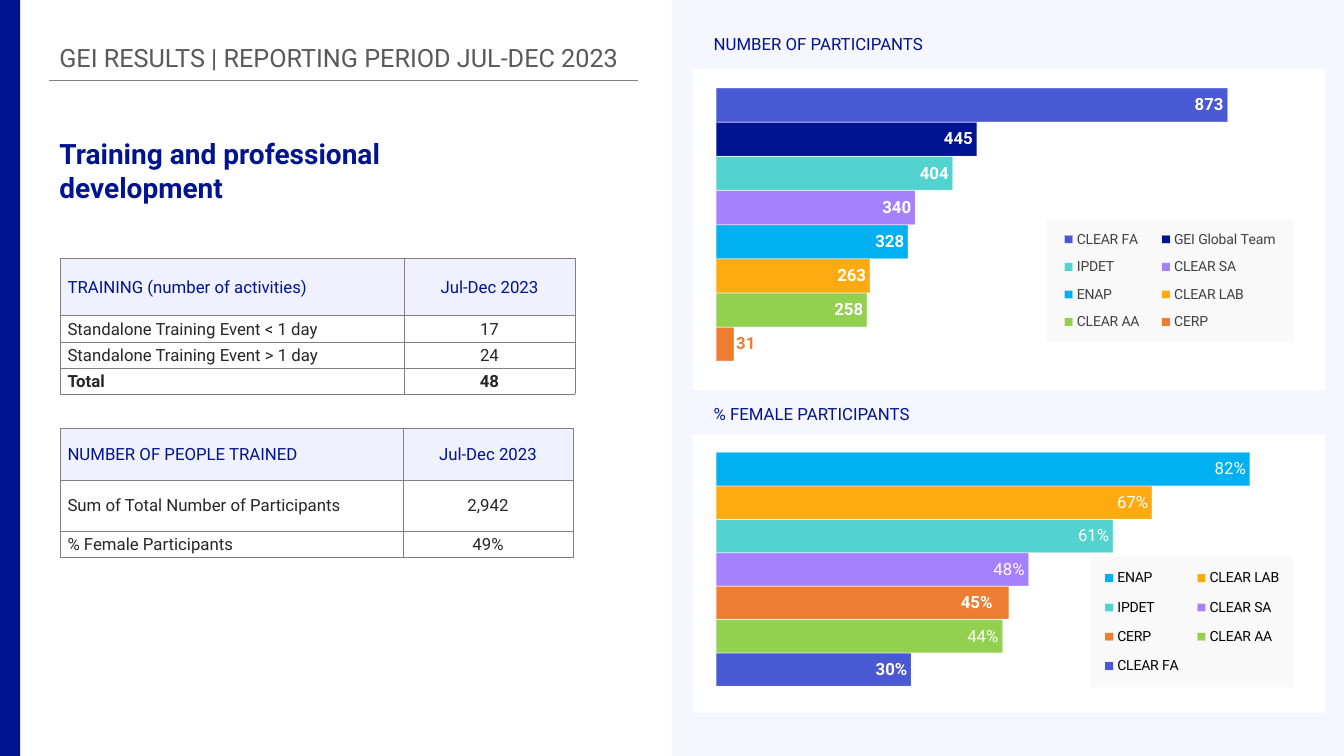
import pptx
import pptx.chart.data
import pptx.dml.color
import pptx.enum.chart
import pptx.enum.shapes
import pptx.enum.text
import pptx.oxml
import pptx.oxml.ns
import pptx.util
from lxml import etree

THEME = {
    "font": "Roboto", "chart_font": "Calibri",
    "navy": "001391", "pale": "EFF1FF", "white": "FFFFFF", "grey": "808080",
    "heading": "595959", "body": "262626", "legend_box": "F9F9F9",
    "title_size": 20, "heading_size": 18, "body_size": 12, "legend_size": 10,
}
TEAM_COLOURS = {
    "CLEAR FA": "4959D4", "GEI Global Team": "001391", "IPDET": "53D3D0",
    "CLEAR SA": "A681FF", "ENAP": "00B0F0", "CLEAR LAB": "FFAA11",
    "CLEAR AA": "92D050", "CERP": "ED7D31",
}
qn = pptx.oxml.ns.qn
rgb = pptx.dml.color.RGBColor.from_string
Pt = pptx.util.Pt
CENTER = pptx.enum.text.PP_ALIGN.CENTER
NAMESPACES = pptx.oxml.ns.nsdecls("c", "a")
BOX_XML = ('<c:spPr %s><a:solidFill><a:srgbClr val="%s"/></a:solidFill>'
           '<a:ln><a:noFill/></a:ln></c:spPr>')
NO_LEADER_XML = ('<c:extLst %s><c:ext uri="{CE6537A1-D6FC-4f65-9D91-7224C49458BB}" '
                 'xmlns:c15="http://schemas.microsoft.com/office/drawing/2012/chart">'
                 '<c15:showLeaderLines val="0"/></c:ext></c:extLst>')


def paint(fill, colour, opacity=None):
    """Fill with a solid colour, optionally see-through (opacity in percent)."""
    fill.solid()
    fill.fore_color.rgb = rgb(colour)
    if opacity is not None:
        node = next(fill._xPr.iter(qn("a:srgbClr")))
        etree.SubElement(node, qn("a:alpha"), val=str(opacity * 1000))


def set_layout(parent, index, inner=False, **shares):
    """Give a chart part a manual layout; x, y, w, h are shares of the chart."""
    for old in parent.findall(qn("c:layout")):
        parent.remove(old)
    layout = etree.Element(qn("c:layout"))
    manual = etree.SubElement(layout, qn("c:manualLayout"))
    if inner:
        etree.SubElement(manual, qn("c:layoutTarget"), val="inner")
    if "w" in shares:
        for mode in ("xMode", "yMode"):
            etree.SubElement(manual, qn("c:" + mode), val="edge")
    for key, share in shares.items():
        etree.SubElement(manual, qn("c:" + key), val=str(share))
    parent.insert(index, layout)


deck = pptx.Presentation()
unit = pptx.util.Inches(1)  # the page is a grid of 13.33 columns by 7.5 rows
deck.slide_width, deck.slide_height = int(13.33 * unit), int(7.5 * unit)
page = deck.slides.add_slide(deck.slide_layouts[6])
half = deck.slide_width // 2

# Right-hand panel and left-hand stripe
for left, width, colour, opacity in (
    (half, half, THEME["pale"], 58),
    (0, int(0.2 * unit), THEME["navy"], None),
):
    panel = page.shapes.add_shape(pptx.enum.shapes.MSO_SHAPE.RECTANGLE,
                                  left, 0, width, deck.slide_height)
    panel.shadow.inherit = False
    paint(panel.fill, colour, opacity)
    panel.line.fill.background()

rule = page.shapes.add_connector(
    pptx.enum.shapes.MSO_CONNECTOR.STRAIGHT,
    *(int(n * unit) for n in (0.49, 0.8, 6.33, 0.8)))
rule.line.color.rgb = rgb(THEME["grey"])
rule.line.width = Pt(0.5)
etree.SubElement(rule._element.spPr, qn("a:effectLst"))

# Headings
for words, place, size, colour, bold, spacing in (
    ("GEI RESULTS | REPORTING PERIOD JUL-DEC 2023", (0.49, 0.4, 10.8, 0.38),
     "heading_size", "heading", False, 0.9),
    ("Training and professional development", (0.49, 1.31, 4.96, 0.77),
     "title_size", "navy", True, 1.0),
    ("NUMBER OF PARTICIPANTS", (6.98, 0.29, 4.31, 0.3), "body_size", "navy", False, 1.0),
    ("% FEMALE PARTICIPANTS", (6.98, 3.96, 4.31, 0.3), "body_size", "navy", False, 1.0),
):
    box = page.shapes.add_textbox(*(int(n * unit) for n in place))
    box.text_frame.word_wrap = True
    para = box.text_frame.paragraphs[0]
    para.text = words
    para.line_spacing = spacing
    para.font.name = THEME["font"]
    para.font.size = Pt(THEME[size])
    para.font.bold = bold
    para.font.color.rgb = rgb(THEME[colour])

# Tables
for top, widths, heights, rows in (
    (2.56, (3.41, 1.69), (0.57, 0.26, 0.26, 0.26), (
        ("TRAINING (number of activities)", "Jul-Dec 2023"),
        ("Standalone Training Event < 1 day", "17"),
        ("Standalone Training Event > 1 day", "24"),
        ("Total", "48"))),
    (4.25, (3.4, 1.68), (0.51, 0.51, 0.26), (
        ("NUMBER OF PEOPLE TRAINED", "Jul-Dec 2023"),
        ("Sum of Total Number of Participants", "2,942"),
        ("% Female Participants", "49%"))),
):
    table = page.shapes.add_table(
        len(rows), len(widths), int(0.6 * unit), int(top * unit),
        int(sum(widths) * unit), int(sum(heights) * unit)).table
    for column, width in zip(table.columns, widths):
        column.width = int(width * unit)
    for r, (height, values) in enumerate(zip(heights, rows)):
        table.rows[r].height = int(height * unit)
        for c, value in enumerate(values):
            cell = table.cell(r, c)
            cell.margin_left = cell.margin_right = int(0.07 * unit)
            cell.margin_top = cell.margin_bottom = 0
            cell.vertical_anchor = pptx.enum.text.MSO_ANCHOR.MIDDLE
            para = cell.text_frame.paragraphs[0]
            para.text = value
            para.line_spacing = 1.07
            if c == 1:
                para.alignment = CENTER
            para.font.name = THEME["font"]
            para.font.size = Pt(THEME["body_size"])
            para.font.bold = values[0] == "Total"
            para.font.color.rgb = rgb(THEME["body" if r else "navy"])
            borders = cell._tc.get_or_add_tcPr()
            for side in ("lnL", "lnR", "lnT", "lnB"):
                edge = etree.SubElement(borders, qn("a:" + side), w=str(Pt(0.25)))
                ink = etree.SubElement(edge, qn("a:solidFill"))
                etree.SubElement(ink, qn("a:srgbClr"), val=THEME["grey"])
            paint(cell.fill, THEME["white" if r else "pale"])

# Bar charts: series run from the bottom bar up
participants = {"CERP": 31, "CLEAR AA": 258, "CLEAR LAB": 263, "ENAP": 328,
                "CLEAR SA": 340, "IPDET": 404, "GEI Global Team": 445, "CLEAR FA": 873}
female_share = {"CLEAR FA": 0.3, "CLEAR AA": 0.44, "CERP": 0.45, "CLEAR SA": 0.48,
                "IPDET": 0.61, "CLEAR LAB": 0.67, "ENAP": 0.82}
for top, height, values, number_format, maximum, legend_place, legend_ink, bold_teams, nudge in (
    (0.68, 3.19, participants, "General", 1000, dict(x=0.56, y=0.47, w=0.39, h=0.38),
     "404040", set(participants), 0.04),
    (4.31, 2.76, female_share, "0%", 0.9, dict(x=0.63, y=0.44, w=0.32, h=0.47),
     "000000", {"CLEAR FA", "CERP"}, -0.02),
):
    data = pptx.chart.data.CategoryChartData(number_format=number_format)
    data.categories = ["1"]
    for team, value in values.items():
        data.add_series(team, [value])
    chart = page.shapes.add_chart(
        pptx.enum.chart.XL_CHART_TYPE.BAR_CLUSTERED,
        *(int(n * unit) for n in (6.87, top, 6.27, height)), data).chart
    chart.has_title = False
    chart.font.name = THEME["chart_font"]
    chart.font.size = Pt(THEME["legend_size"])
    chart._chartSpace.chart.addnext(
        pptx.oxml.parse_xml(BOX_XML % (NAMESPACES, THEME["white"])))
    set_layout(chart._chartSpace.chart.plotArea, 0, inner=True,
               x=0.037, y=0.026, w=0.927, h=0.919)
    chart.category_axis.visible = chart.value_axis.visible = False
    chart.value_axis.has_major_gridlines = False
    chart.value_axis.minimum_scale, chart.value_axis.maximum_scale = 0, maximum

    chart.has_legend = True
    legend = chart.legend
    legend.position = pptx.enum.chart.XL_LEGEND_POSITION.RIGHT
    legend.include_in_layout = False
    legend.font.name = THEME["font"]
    legend.font.size = Pt(THEME["legend_size"])
    legend.font.color.rgb = rgb(legend_ink)
    set_layout(legend._element, 1, **legend_place)
    legend._element.find(qn("c:overlay")).addnext(
        pptx.oxml.parse_xml(BOX_XML % (NAMESPACES, THEME["legend_box"])))

    plot = chart.plots[0]
    plot.gap_width = 65
    plot.vary_by_categories = False
    for series in plot.series:
        paint(series.format.fill, TEAM_COLOURS[series.name])
        series.format.line.width = Pt(0.75)
        paint(series.format.line.fill, THEME["white"], 50)
        labels = series.data_labels
        labels.show_value = True
        labels.number_format = number_format
        labels.number_format_is_linked = False
        targets = [labels]
        if series.name == "CERP":
            targets.append(series.points[0].data_label)
        for target in targets:
            target.position = pptx.enum.chart.XL_LABEL_POSITION.INSIDE_END
            target.font.name = THEME["font"]
            target.font.size = Pt(THEME["body_size"])
            target.font.bold = series.name in bold_teams
            outside = values[series.name] == 31
            target.font.color.rgb = rgb(TEAM_COLOURS["CERP"] if outside else THEME["white"])
        if series.name == "CERP":
            set_layout(next(labels._element.iter(qn("c:dLbl"))), 1, x=nudge, y=0)
            for leader in labels._element.findall(qn("c:showLeaderLines")):
                leader.set("val", "0")
            labels._element.append(pptx.oxml.parse_xml(NO_LEADER_XML % NAMESPACES))

deck.save("out.pptx")
